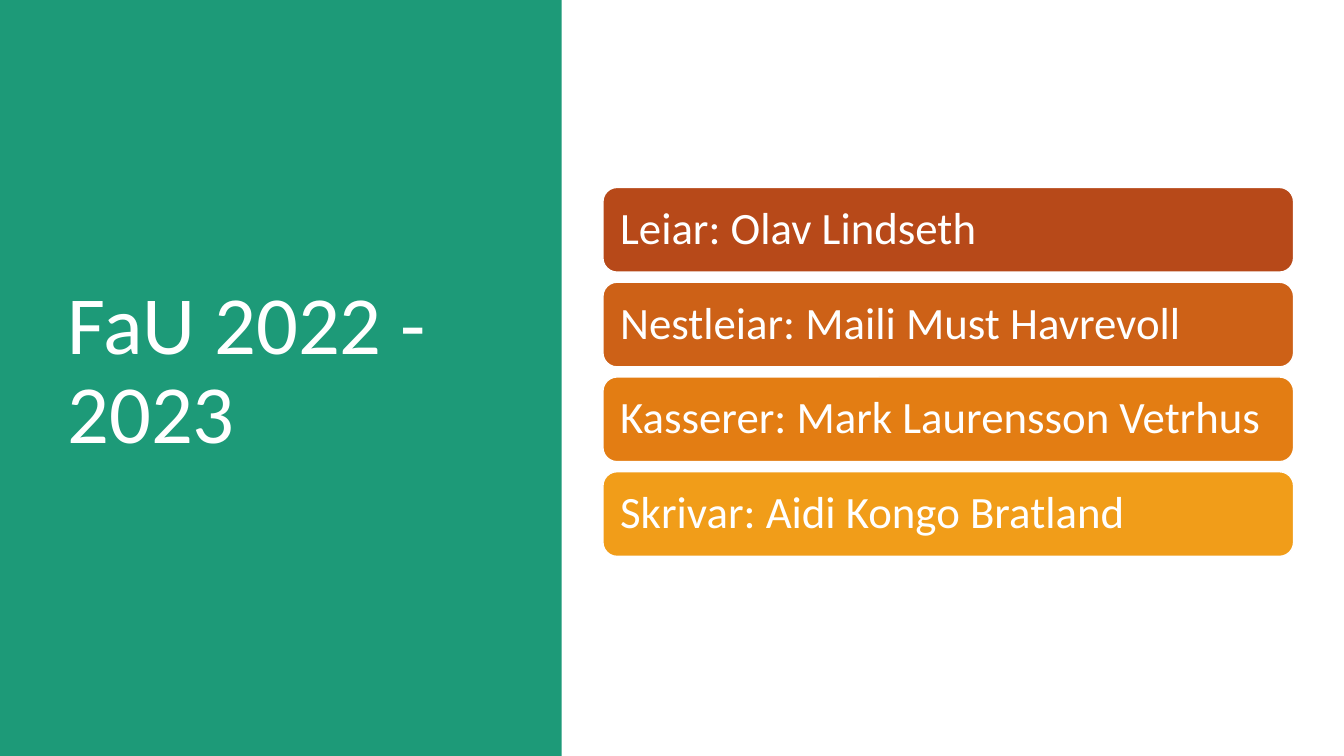
from pptx import Presentation
from pptx.dml.color import RGBColor
from pptx.enum.shapes import MSO_SHAPE
from pptx.enum.text import MSO_ANCHOR, MSO_AUTO_SIZE, PP_ALIGN
from pptx.util import Inches, Pt

RECTANGLE = MSO_SHAPE.RECTANGLE
ROUNDED = MSO_SHAPE.ROUNDED_RECTANGLE
MIDDLE = MSO_ANCHOR.MIDDLE
NO_AUTOFIT = MSO_AUTO_SIZE.NONE
LEFT = PP_ALIGN.LEFT

WHITE = RGBColor(0xFF, 0xFF, 0xFF)
GREEN = RGBColor(0x1D, 0x9A, 0x78)
RUST = RGBColor(0xB7, 0x49, 0x19)
BURNT_ORANGE = RGBColor(0xCD, 0x61, 0x17)
ORANGE = RGBColor(0xE3, 0x7D, 0x13)
AMBER = RGBColor(0xF1, 0x9D, 0x19)

FONT = "Calibri"
TITLE_ONLY = 5

ROLES = [
    ("Leiar: Olav Lindseth", RUST),
    ("Nestleiar: Maili Must Havrevoll", BURNT_ORANGE),
    ("Kasserer: Mark Laurensson Vetrhus", ORANGE),
    ("Skrivar: Aidi Kongo Bratland", AMBER),
]


def write_text(shape, text, size, color=WHITE, inset=0.1, inset_y=0.05):
    """Fill a shape with one left-aligned, vertically centred paragraph."""
    frame = shape.text_frame
    frame.word_wrap = True
    frame.auto_size = NO_AUTOFIT
    frame.vertical_anchor = MIDDLE
    frame.margin_left = frame.margin_right = Inches(inset)
    frame.margin_top = frame.margin_bottom = Inches(inset_y)
    para = frame.paragraphs[0]
    para.alignment = LEFT
    para.line_spacing = 0.9
    span = para.add_run()
    span.text = text
    span.font.name = FONT
    span.font.size = Pt(size)
    span.font.color.rgb = color


def add_block(page, kind, left, top, width, height, fill):
    block = page.shapes.add_shape(
        kind, Inches(left), Inches(top), Inches(width), Inches(height))
    block.shadow.inherit = False
    block.fill.solid()
    block.fill.fore_color.rgb = fill
    block.line.fill.background()
    return block


def add_title_panel(page, left, top, width, height):
    panel = add_block(page, RECTANGLE, left, top, width, height, GREEN)
    title = page.shapes.title
    # The panel lies behind the title placeholder
    title.element.addprevious(panel.element)
    title.left, title.top = Inches(left + 0.57), Inches(top + 0.68)
    title.width, title.height = Inches(width - 1.41), Inches(height - 1.48)
    write_text(title, "FaU 2022 - 2023", 59)


def add_role_bars(page, left, top, width, height, gap=0.1):
    bar_height = (height - gap * (len(ROLES) - 1)) / len(ROLES)
    for index, (role, fill) in enumerate(ROLES):
        bar_top = top + index * (bar_height + gap)
        bar = add_block(page, ROUNDED, left, bar_top, width, bar_height, fill)
        bar.line.color.rgb = WHITE
        bar.line.width = Pt(1)
        write_text(bar, role, 32, inset=0.13)


def main():
    deck = Presentation()
    deck.slide_width, deck.slide_height = Inches(13.33), Inches(7.5)
    page = deck.slides.add_slide(deck.slide_layouts[TITLE_ONLY])
    add_title_panel(page, 0, 0, 5.57, 7.5)
    add_role_bars(page, 5.98, 1.86, 6.85, 3.66)
    deck.save("out.pptx")


if __name__ == "__main__":
    main()
